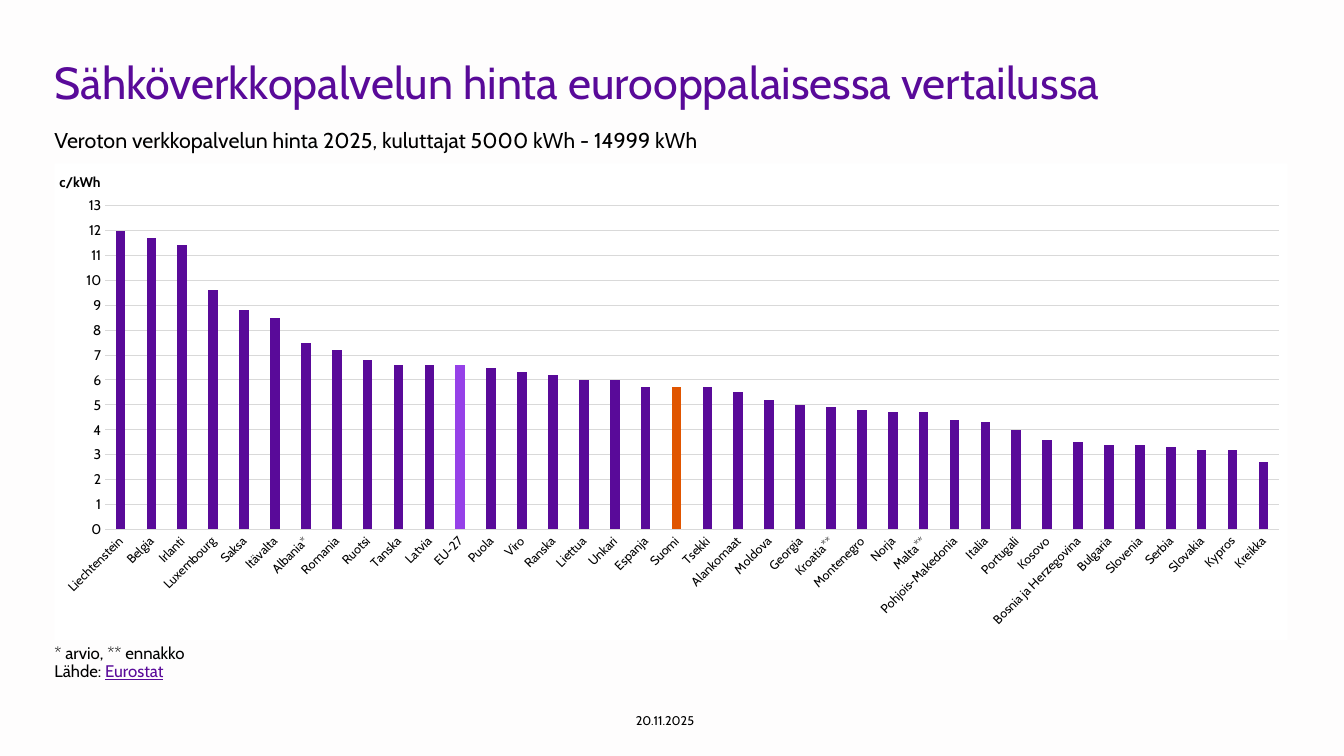
from pptx import Presentation
from pptx.chart.data import CategoryChartData
from pptx.dml.color import RGBColor
from pptx.enum.chart import XL_CHART_TYPE as ChartType, XL_TICK_MARK as TickMark
from pptx.enum.text import MSO_ANCHOR as Anchor, MSO_AUTO_SIZE as AutoSize, PP_ALIGN as Align
from pptx.oxml import parse_xml
from pptx.oxml.ns import nsdecls, qn
from pptx.util import Inches, Pt

PURPLE = RGBColor(0x59, 0x0A, 0x99)
LILAC = RGBColor(0x96, 0x41, 0xE8)
ORANGE = RGBColor(0xE0, 0x55, 0x00)
BLACK = RGBColor(0, 0, 0)
GRID = RGBColor(0xD9, 0xD9, 0xD9)
PAPER = RGBColor(0xFE, 0xFD, 0xFD)
FONT = "Cabin"

PRICES = {
    "Liechtenstein": 12, "Belgia": 11.7, "Irlanti": 11.4, "Luxembourg": 9.6,
    "Saksa": 8.8, "Itävalta": 8.5, "Albania*": 7.5, "Romania": 7.2,
    "Ruotsi": 6.8, "Tanska": 6.6, "Latvia": 6.6, "EU-27": 6.6, "Puola": 6.5,
    "Viro": 6.3, "Ranska": 6.2, "Liettua": 6, "Unkari": 6, "Espanja": 5.7,
    "Suomi": 5.7, "Tsekki": 5.7, "Alankomaat": 5.5, "Moldova": 5.2,
    "Georgia": 5, "Kroatia**": 4.9, "Montenegro": 4.8, "Norja": 4.7,
    "Malta**": 4.7, "Pohjois-Makedonia": 4.4, "Italia": 4.3, "Portugali": 4,
    "Kosovo": 3.6, "Bosnia ja Herzegovina": 3.5, "Bulgaria": 3.4,
    "Slovenia": 3.4, "Serbia": 3.3, "Slovakia": 3.2, "Kypros": 3.2,
    "Kreikka": 2.7,
}
HIGHLIGHTS = {"EU-27": LILAC, "Suomi": ORANGE}


def style_text(shape, box, size, color, spacing=None, align=Align.LEFT,
               anchor=Anchor.TOP, right=0.1):
    shape.left, shape.top, shape.width, shape.height = map(Inches, box)
    frame = shape.text_frame
    frame_format = {
        "word_wrap": True, "auto_size": AutoSize.NONE, "vertical_anchor": anchor,
        "margin_left": 0, "margin_right": Inches(right),
        "margin_top": Inches(0.05), "margin_bottom": Inches(0.05),
    }
    for name, value in frame_format.items():
        setattr(frame, name, value)
    paragraph = frame.paragraphs[0]
    properties = paragraph._p.get_or_add_pPr()
    properties.set("marL", "0")
    properties.set("indent", "0")
    properties.append(parse_xml(f"<a:buNone {nsdecls('a')}/>"))
    paragraph.alignment = align
    paragraph.line_spacing = spacing
    paragraph.space_before = Pt(0)
    for run in paragraph.runs:
        run.font.name, run.font.size = FONT, Pt(size)
        run.font.color.rgb = color


def set_layout(parent, index, target="", **position):
    old = parent.find(qn("c:layout"))
    if old is not None:
        parent.remove(old)
    modes = "".join(f'<c:{key}Mode val="edge"/>' for key in "xy")
    values = "".join(f'<c:{key} val="{value}"/>' for key, value in position.items())
    parent.insert(index, parse_xml(
        f"<c:layout {nsdecls('c')}><c:manualLayout>{target}{modes}{values}"
        "</c:manualLayout></c:layout>"))


prs = Presentation()
prs.slide_width, prs.slide_height = Inches(13.33), Inches(7.5)
slide = prs.slides.add_slide(prs.slide_layouts[3])
slide.background.fill.solid()
slide.background.fill.fore_color.rgb = PAPER

# Title and subtitle
title, subtitle, footnote = slide.placeholders
title.text_frame.text = "Sähköverkkopalvelun hinta eurooppalaisessa vertailussa"
style_text(title, (0.54, 0.55, 12.23, 1.09), 32, PURPLE, 0.9)
subtitle.text_frame.text = "Veroton verkkopalvelun hinta 2025, kuluttajat 5000 kWh - 14999 kWh"
style_text(subtitle, (0.54, 1.28, 12.24, 0.3), 15.3, BLACK, 0.7)

# Footnote and source
notes = footnote.text_frame.paragraphs[0]
notes.add_run().text = "* arvio, ** ennakko"
notes.add_line_break()
notes.add_run().text = "Lähde: "
source = notes.add_run()
source.text = "Eurostat"
style_text(footnote, (0.54, 6.35, 12.24, 0.47), 12, BLACK, 0.9)
source.font.color.rgb = PURPLE
source.font.underline = True

# Date
date = slide.shapes.add_textbox(0, 0, 0, 0)
date.text_frame.text = "20.11.2025"
style_text(date, (6.04, 6.95, 1.11, 0.4), 9, BLACK, align=Align.CENTER,
           anchor=Anchor.MIDDLE, right=0)

# Price chart
price_data = CategoryChartData(number_format="0.0")
price_data.categories = list(PRICES)
price_data.add_series("Series 1", list(PRICES.values()))
chart = slide.shapes.add_chart(
    ChartType.COLUMN_CLUSTERED, Inches(0.54), Inches(1.62), Inches(12.23),
    Inches(4.73), price_data).chart
chart.has_title = chart.has_legend = False
chart.font.name, chart.font.size = FONT, Pt(10)
chart.font.color.rgb = BLACK
chart_space = chart._chartSpace
chart_space.find(qn("c:chart")).addnext(parse_xml(
    f'<c:spPr {nsdecls("c", "a")}><a:solidFill><a:srgbClr val="FFFFFF"/></a:solidFill>'
    "<a:ln><a:noFill/></a:ln></c:spPr>"))
set_layout(chart_space.chart.plotArea, 0, '<c:layoutTarget val="inner"/>',
           x=0.041, y=0.089, w=0.952, h=0.679)

# Columns, with the EU average and Finland highlighted
plot = chart.plots[0]
plot.gap_width, plot.overlap, plot.vary_by_categories = 219, -27, False
columns = plot.series[0]
columns.format.fill.solid()
columns.format.fill.fore_color.rgb = PURPLE
for country, color in HIGHLIGHTS.items():
    fill = columns.points[list(PRICES).index(country)].format.fill
    fill.solid()
    fill.fore_color.rgb = color

# Axes
countries, price = chart.category_axis, chart.value_axis
for axis, size in ((countries, 9), (price, 10)):
    axis.major_tick_mark = axis.minor_tick_mark = TickMark.NONE
    axis.tick_labels.font.name, axis.tick_labels.font.size = FONT, Pt(size)
    axis.tick_labels.font.color.rgb = BLACK
countries._element.find(qn("c:txPr")).find(qn("a:bodyPr")).set("rot", "-2700000")
price.minimum_scale, price.maximum_scale, price.major_unit = 0, 13, 1
price.tick_labels.number_format = "0"
price.tick_labels.number_format_is_linked = False
price.format.line.fill.background()
for line in (countries.format.line, price.major_gridlines.format.line):
    line.color.rgb, line.width = GRID, Pt(0.75)

# Unit above the value axis
unit = price.axis_title
unit.text_frame.text = "c/kWh"
unit_font = unit.text_frame.paragraphs[0].runs[0].font
unit_font.name, unit_font.size, unit_font.bold = FONT, Pt(10), True
unit_font.color.rgb = BLACK
unit_body = unit.text_frame._txBody.find(qn("a:bodyPr"))
unit_body.set("rot", "0")
unit_body.set("vert", "horz")
set_layout(unit._element, 1, x=0.002, y=0.014)

prs.save("out.pptx")
